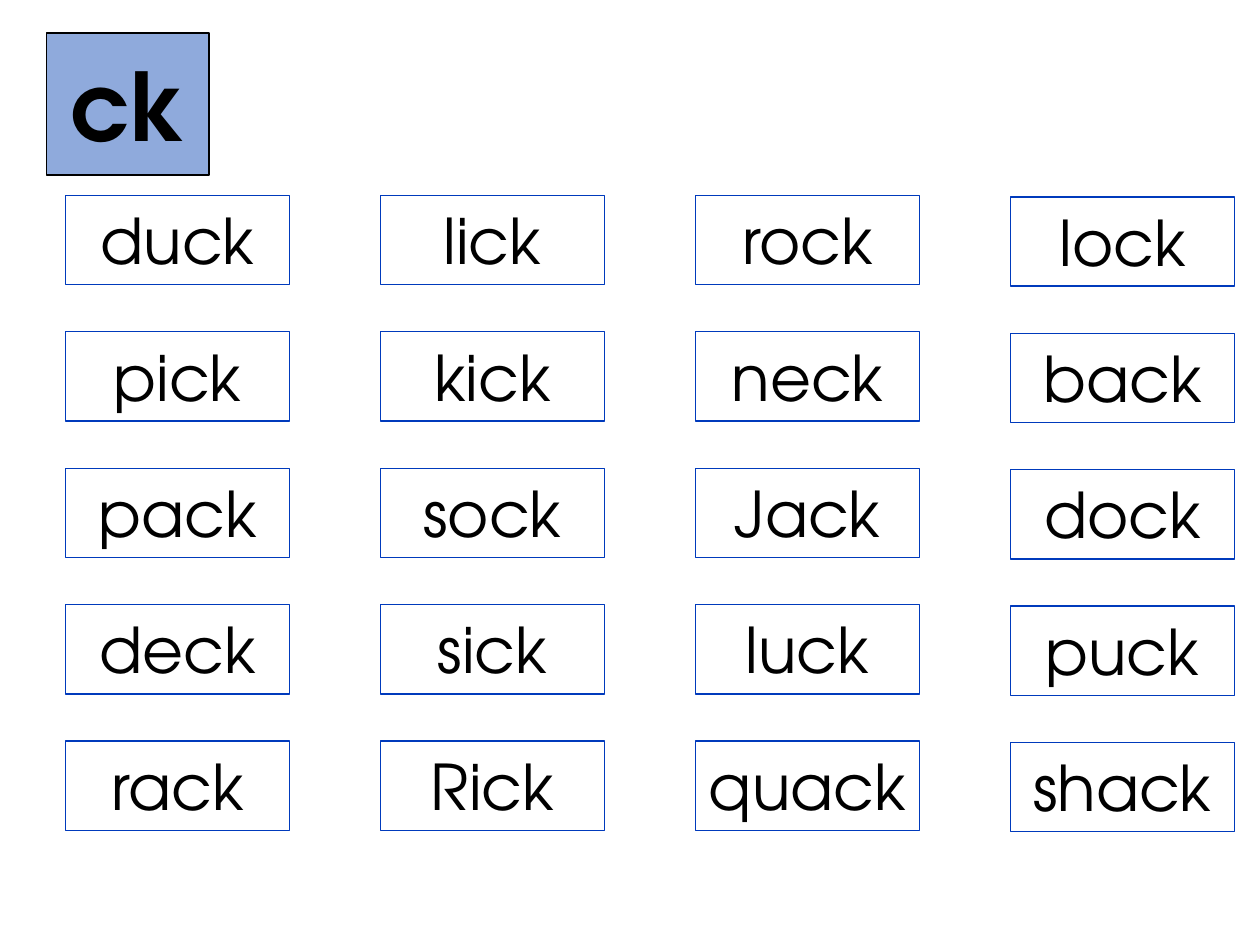
"""Build a word-card slide for the ck sound."""
from dataclasses import dataclass

from pptx import Presentation
from pptx.dml.color import RGBColor
from pptx.enum.shapes import MSO_SHAPE
from pptx.enum.text import MSO_ANCHOR, MSO_AUTO_SIZE, PP_ALIGN
from pptx.util import Cm, Pt

RECT = MSO_SHAPE.RECTANGLE
TOP = MSO_ANCHOR.TOP
MIDDLE = MSO_ANCHOR.MIDDLE
GROW = MSO_AUTO_SIZE.SHAPE_TO_FIT_TEXT
FIXED = MSO_AUTO_SIZE.NONE
CENTER = PP_ALIGN.CENTER

FONT = "TeX Gyre Adventor"
BLACK = "000000"
LEFT, STEP_X, STEP_Y = 1.32, 6.35, 2.75
CARD_W, CARD_H = 4.52, 1.8


@dataclass
class Column:
    """Words of one column and the top of its first card in cm."""
    top: float
    words: tuple[str, ...]


@dataclass
class Box:
    """Place and look of a rectangle, with lengths in cm."""
    x: float
    y: float
    w: float
    h: float
    line: str
    width: float
    fill: str | None = None


COLUMNS = (
    Column(3.94, ("duck", "pick", "pack", "deck", "rack")),
    Column(3.94, ("lick", "kick", "sock", "sick", "Rick")),
    Column(3.94, ("rock", "neck", "Jack", "luck", "quack")),
    Column(3.97, ("lock", "back", "dock", "puck", "shack")),
)


def color(code: str) -> RGBColor:
    """Turn a hex string into a colour."""
    return RGBColor.from_string(code)


def write(shape, text: str, *, size: float, bold: bool = False,
          anchor=TOP, fit=FIXED) -> None:
    """Put centred text into a shape."""
    frame = shape.text_frame
    frame.word_wrap = True
    frame.auto_size = fit
    frame.vertical_anchor = anchor
    par = frame.paragraphs[0]
    par.alignment = CENTER
    run = par.add_run()
    run.text = text
    run.font.name = FONT
    run.font.size = Pt(size)
    run.font.bold = bold
    run.font.color.rgb = color(BLACK)


def draw(slide, box: Box):
    """Draw a rectangle and return it."""
    shape = slide.shapes.add_shape(
        RECT, Cm(box.x), Cm(box.y), Cm(box.w), Cm(box.h))
    shape.shadow.inherit = False
    if box.fill:
        shape.fill.solid()
        shape.fill.fore_color.rgb = color(box.fill)
    else:
        shape.fill.background()
    shape.line.color.rgb = color(box.line)
    shape.line.width = Pt(box.width)
    return shape


def main() -> None:
    """Build and save the slide."""
    deck = Presentation()
    deck.slide_width, deck.slide_height = Cm(25.4), Cm(19.05)
    slide = deck.slides.add_slide(deck.slide_layouts[6])

    for col, column in enumerate(COLUMNS):
        for row, word in enumerate(column.words):
            box = Box(LEFT + col * STEP_X, column.top + row * STEP_Y,
                      CARD_W, CARD_H, "003ABC", 0.75)
            write(draw(slide, box), word, size=36, fit=GROW)

    sound = Box(0.94, 0.66, 3.28, 2.87, BLACK, 1, "8FAADC")
    write(draw(slide, sound), "ck", size=54, bold=True, anchor=MIDDLE)

    deck.save("out.pptx")


if __name__ == "__main__":
    main()
